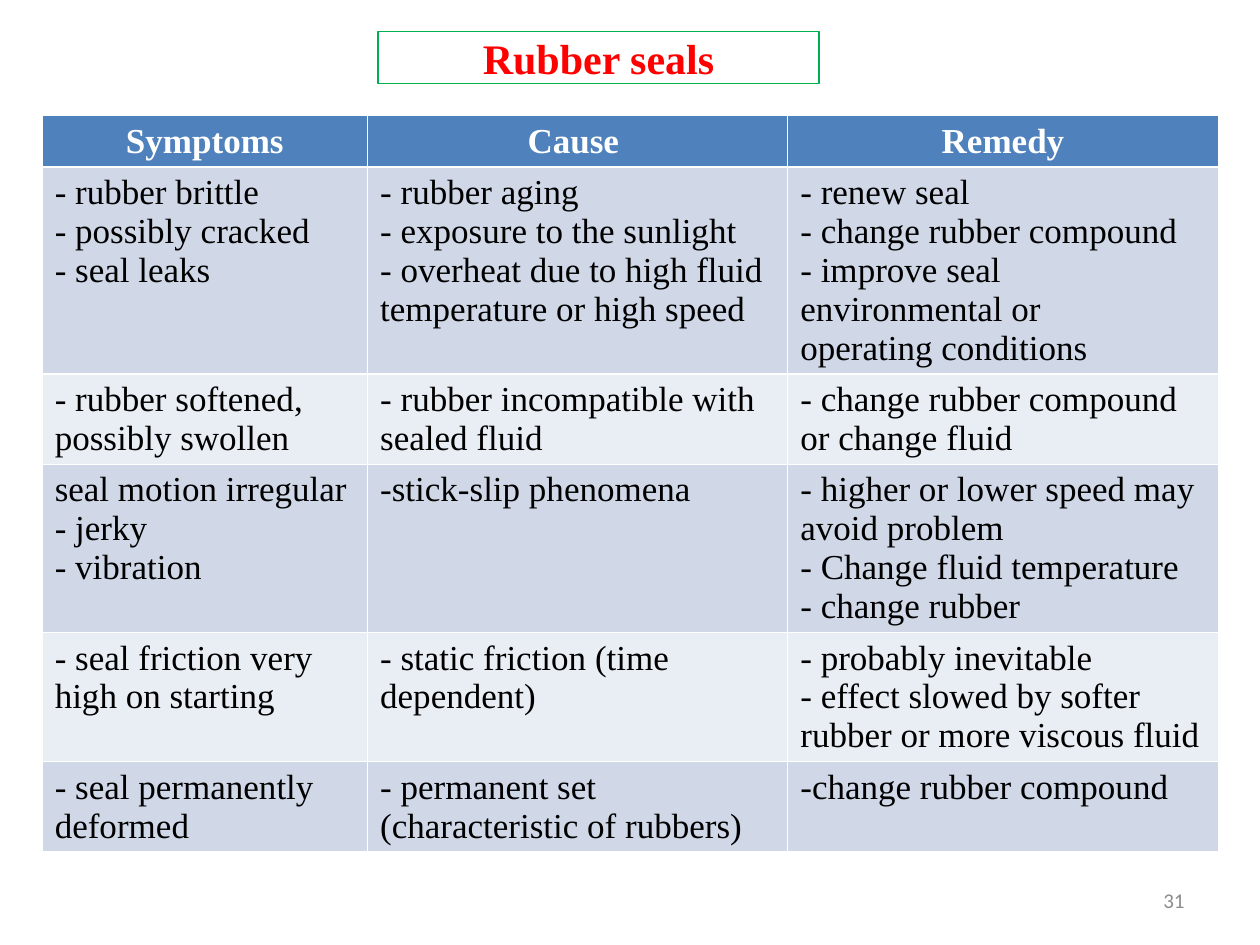
from dataclasses import dataclass
from typing import Any

from pptx import Presentation
from pptx.dml.color import RGBColor
from pptx.enum.text import MSO_ANCHOR, PP_ALIGN
from pptx.util import Cm, Pt

RED = RGBColor(0xFF, 0x00, 0x00)
GREEN = RGBColor(0x00, 0xB0, 0x50)
WHITE = RGBColor(0xFF, 0xFF, 0xFF)
BLACK = RGBColor(0x00, 0x00, 0x00)
GRAY = RGBColor(0x8C, 0x8C, 0x8C)
HEADER_BLUE = RGBColor(0x4F, 0x81, 0xBD)
BAND_FILLS = (RGBColor(0xD0, 0xD8, 0xE8), RGBColor(0xE9, 0xED, 0xF4))

SERIF = "Times New Roman"
TITLE_FORMAT = {"name": SERIF, "size": Pt(24), "bold": True}
HEADER_FORMAT = {"name": SERIF, "size": Pt(20), "bold": True}
BODY_FORMAT = {"name": SERIF, "size": Pt(20), "bold": False}
NUMBER_FORMAT = {"name": "Calibri", "size": Pt(12), "bold": False}

COLUMN_WIDTHS = (Cm(6.56), Cm(8.47), Cm(8.68))
HEADER_HEIGHT = Cm(1.03)


@dataclass(frozen=True)
class Fault:
    symptoms: str
    cause: str
    remedy: str
    height: Cm


HEADINGS = ("Symptoms", "Cause ", "Remedy")
FAULTS = (
    Fault(
        "- rubber brittle\n- possibly cracked\n- seal leaks",
        "- rubber aging\n- exposure to the sunlight\n"
        "- overheat due to high fluid\ntemperature or high speed",
        "- renew seal\n- change rubber compound\n"
        "- improve seal environmental or\noperating conditions",
        Cm(4.17),
    ),
    Fault(
        "- rubber softened, possibly swollen",
        "- rubber incompatible with sealed fluid",
        "- change rubber compound or change fluid",
        Cm(1.82),
    ),
    Fault(
        "seal motion irregular\n- jerky\n- vibration",
        "-stick-slip phenomena",
        "- higher or lower speed may avoid problem\n"
        "- Change fluid temperature\n- change rubber",
        Cm(3.39),
    ),
    Fault(
        "- seal friction very high on starting",
        "- static friction (time dependent)",
        "- probably inevitable\n"
        "- effect slowed by softer rubber or more viscous fluid",
        Cm(2.6),
    ),
    Fault(
        "- seal permanently\ndeformed",
        "- permanent set (characteristic of rubbers)",
        "-change rubber compound",
        Cm(1.82),
    ),
)


def write_text(frame: Any, text: str, font_format: dict[str, Any],
               color: RGBColor, alignment: PP_ALIGN) -> None:
    frame.text = text
    for para in frame.paragraphs:
        para.alignment = alignment
        for span in para.runs:
            for attribute, value in font_format.items():
                setattr(span.font, attribute, value)
            span.font.color.rgb = color


def place_title(page: Any) -> None:
    title = page.shapes.title
    position = {"left": Cm(7.62), "top": Cm(0.63), "width": Cm(8.89), "height": Cm(1.06)}
    for attribute, value in position.items():
        setattr(title, attribute, value)
    title.line.color.rgb = GREEN
    title.line.width = Pt(0.75)
    title.text_frame.vertical_anchor = MSO_ANCHOR.MIDDLE
    write_text(title.text_frame, "Rubber seals", TITLE_FORMAT, RED, PP_ALIGN.CENTER)


def fill_row(table: Any, row: int, texts: tuple[str, ...], fill: RGBColor,
             font_format: dict[str, Any], color: RGBColor, alignment: PP_ALIGN) -> None:
    for column, text in enumerate(texts):
        cell = table.cell(row, column)
        cell.fill.solid()
        cell.fill.fore_color.rgb = fill
        write_text(cell.text_frame, text, font_format, color, alignment)


def add_fault_table(page: Any) -> None:
    heights = [HEADER_HEIGHT] + [fault.height for fault in FAULTS]
    table = page.shapes.add_table(
        len(heights), len(HEADINGS), Cm(0.85), Cm(2.33), sum(COLUMN_WIDTHS), sum(heights)
    ).table
    for column, width in zip(table.columns, COLUMN_WIDTHS):
        column.width = width
    for row, height in zip(table.rows, heights):
        row.height = height
    fill_row(table, 0, HEADINGS, HEADER_BLUE, HEADER_FORMAT, WHITE, PP_ALIGN.CENTER)
    for index, fault in enumerate(FAULTS):
        texts = (fault.symptoms, fault.cause, fault.remedy)
        fill_row(table, index + 1, texts, BAND_FILLS[index % 2], BODY_FORMAT,
                 BLACK, PP_ALIGN.LEFT)


def add_page_number(page: Any) -> None:
    box = page.shapes.add_textbox(Cm(18.2), Cm(17.65), Cm(5.93), Cm(1.01))
    box.text_frame.word_wrap = True
    box.text_frame.vertical_anchor = MSO_ANCHOR.MIDDLE
    write_text(box.text_frame, "31", NUMBER_FORMAT, GRAY, PP_ALIGN.RIGHT)


def main() -> None:
    deck = Presentation()
    deck.slide_width, deck.slide_height = Cm(25.4), Cm(19.05)
    page = deck.slides.add_slide(deck.slide_layouts[5])
    place_title(page)
    add_fault_table(page)
    add_page_number(page)
    deck.save("out.pptx")


if __name__ == "__main__":
    main()
